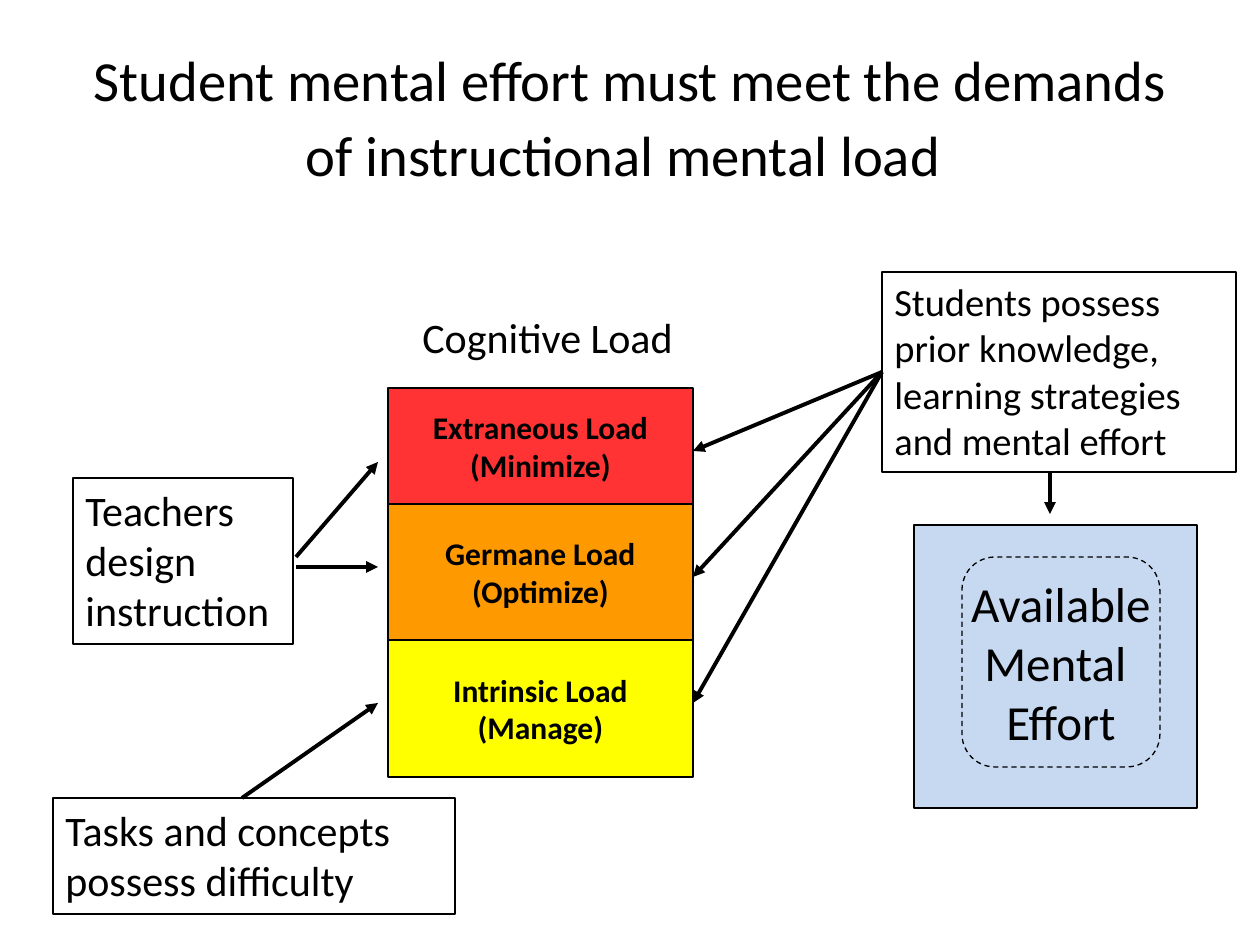
"""Build a slide on how student mental effort meets cognitive load."""
from lxml import etree
from pptx import Presentation
from pptx import util as u
from pptx.dml.color import RGBColor
from pptx.enum import dml, shapes, text
from pptx.oxml.ns import qn

PX = u.Inches(1) // 126
BLACK = RGBColor(0, 0, 0)
RED = RGBColor(255, 0, 0)
ORANGE = RGBColor(255, 153, 0)
YELLOW = RGBColor(255, 255, 0)
BLUE = RGBColor(198, 217, 241)
LEFT, MID = text.PP_ALIGN.LEFT, text.PP_ALIGN.CENTER
TOP, CORE = text.MSO_ANCHOR.TOP, text.MSO_ANCHOR.MIDDLE
RECT = shapes.MSO_SHAPE.RECTANGLE
ROUND = shapes.MSO_SHAPE.ROUNDED_RECTANGLE


def style(item, form):
    for key, val in form.items():
        setattr(item, key, val)


def write(shape, lines, size, align, bold=False, wrap=True):
    frame = shape.text_frame
    style(frame, {"word_wrap": wrap,
                  "vertical_anchor": TOP if align == LEFT else CORE})
    for num, line in enumerate(lines):
        para = frame.add_paragraph() if num else frame.paragraphs[0]
        para.alignment = align
        run = para.add_run()
        run.text = line
        style(run.font, {"name": "Calibri", "size": u.Pt(size), "bold": bold})
        run.font.color.rgb = BLACK


prs = Presentation()
style(prs, {"slide_width": 1260 * PX, "slide_height": 945 * PX})
slide = prs.slides.add_slide(prs.slide_layouts[6])

title = slide.shapes.add_textbox(*(n * PX for n in (63, 38, 1134, 158)))
write(title, ["Student mental effort must meet the demands of instructional mental load"],
      32.4, MID)
space = title.text_frame.paragraphs[0].add_run()
space.text = " "
style(space.font, {"name": "Calibri", "size": u.Pt(36)})

boxes = {
    "teach": (RECT, (73, 478, 220, 166), None, ["Teachers", "design", "instruction"], 24, LEFT),
    "know": (RECT, (882, 272, 354, 200), None,
             ["Students possess", "prior knowledge,", "learning strategies",
              "and mental effort"], 22, LEFT),
    "task": (RECT, (53, 798, 402, 116), None,
             ["Tasks and concepts", "possess difficulty"], 24, LEFT),
    "pool": (RECT, (914, 525, 283, 283), BLUE, [], 28, MID),
    "effort": (ROUND, (962, 557, 198, 210), BLUE, ["Available", "Mental ", "Effort"], 28, MID),
    "germane": (RECT, (388, 504, 305, 136), ORANGE, ["Germane Load", "(Optimize)"], 18, MID),
    "extra": (RECT, (388, 388, 305, 116), RED, ["Extraneous Load", "(Minimize)"], 18, MID),
    "basic": (RECT, (388, 640, 305, 137), YELLOW, ["Intrinsic Load", "(Manage)"], 18, MID),
}
made = {}
for name, (kind, spot, fill, lines, size, align) in boxes.items():
    box = made[name] = slide.shapes.add_shape(kind, *(n * PX for n in spot))
    box.shadow.inherit = False
    if fill is None:
        box.fill.background()
    else:
        box.fill.solid()
        box.fill.fore_color.rgb = fill
    box.line.color.rgb = BLACK
    box.line.width = u.Pt(1.5)
    write(box, lines, size, align, bold=size == 18, wrap=align == LEFT)

style(made["effort"].line, {"width": u.Pt(0.75), "dash_style": dml.MSO_LINE.DASH})
tint = made["extra"].element.find(".//" + qn("a:srgbClr"))
etree.SubElement(tint, qn("a:alpha"), val="80000")

label = slide.shapes.add_textbox(*(n * PX for n in (410, 305, 278, 63)))
write(label, ["Cognitive Load"], 24, LEFT)

arrows = [
    ((1050, 472, 1050, 514), None),
    ((296, 557, 378, 462), None),
    ((296, 567, 378, 567), None),
    ((242, 798, 378, 703), None),
] + [((882, 372, 693, low), "know") for low in (703, 577, 451)]
for ends, start in arrows:
    arrow = slide.shapes.add_connector(shapes.MSO_CONNECTOR.STRAIGHT, *(n * PX for n in ends))
    if start:
        arrow.begin_connect(made[start], 1)
    arrow.line.color.rgb = BLACK
    arrow.line.width = u.Pt(2.25)
    etree.SubElement(arrow.line._get_or_add_ln(), qn("a:tailEnd"), type="triangle")
    etree.SubElement(arrow.element.spPr, qn("a:effectLst"))

prs.save("out.pptx")
